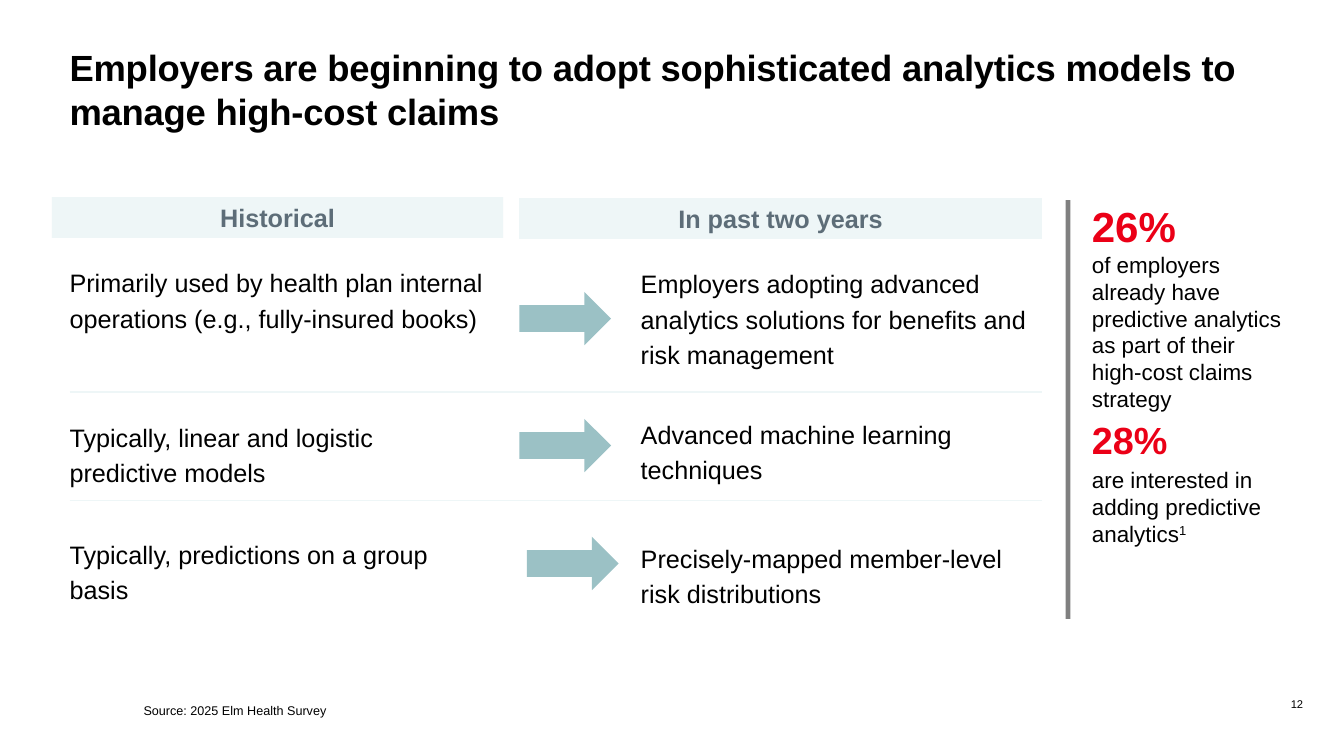
from pptx import Presentation
from pptx.dml.color import RGBColor
from pptx.enum.shapes import MSO_CONNECTOR, MSO_SHAPE
from pptx.enum.text import MSO_ANCHOR, PP_ALIGN
from pptx.oxml.ns import qn
from pptx.util import Pt
from lxml import etree

PX = 9144  # EMU in one px, 100 px to the inch
FONT = "Arial"
BLACK = RGBColor(0x00, 0x00, 0x00)
RED = RGBColor(0xEB, 0x00, 0x17)
SLATE = RGBColor(0x5D, 0x6D, 0x78)
PALE = RGBColor(0xEE, 0xF6, 0xF7)
TEAL = RGBColor(0x9B, 0xC1, 0xC5)
GRAY = RGBColor(0x80, 0x80, 0x80)

# Historical text, its top, recent text, its top, arrow left, arrow top
ROWS = [
    ("Primarily used by health plan internal operations (e.g., fully-insured books)", 521,
     "Employers adopting advanced analytics solutions for benefits and risk management", 523,
     1030, 579),
    ("Typically, linear and logistic predictive models", 827,
     "Advanced machine learning techniques", 821, 1030, 831),
    ("Typically, predictions on a group basis", 1060,
     "Precisely-mapped member-level risk distributions", 1068, 1045, 1065),
]


def emu(*lengths):
    return [length * PX for length in lengths]


def style(paragraph, size, color=BLACK, bold=False):
    font = paragraph.font
    font.name, font.size, font.bold = FONT, Pt(size), bold
    font.color.rgb = color


def add_frame(slide, box, inset=True):
    """Add a wrapping text box and return its text frame."""
    frame = slide.shapes.add_textbox(*emu(*box)).text_frame
    frame.word_wrap = True
    if not inset:
        frame.margin_left = frame.margin_right = frame.margin_top = frame.margin_bottom = 0
    return frame


def add_text(slide, box, text, size, bold=False, inset=False):
    paragraph = add_frame(slide, box, inset).paragraphs[0]
    paragraph.add_run().text = text
    style(paragraph, size, bold=bold)
    return paragraph


def add_block(slide, kind, box, color):
    shape = slide.shapes.add_shape(kind, *emu(*box))
    shape.shadow.inherit = False
    shape.fill.solid()
    shape.fill.fore_color.rgb = color
    shape.line.fill.background()
    return shape


def add_title(slide, box):
    paragraph = add_text(
        slide, box,
        "Employers are beginning to adopt sophisticated analytics models to manage high-cost claims",
        52, bold=True)
    paragraph.runs[0].font._element.set("spc", "-30")


def add_heading(slide, box, text):
    frame = add_block(slide, MSO_SHAPE.RECTANGLE, box, PALE).text_frame
    frame.vertical_anchor = MSO_ANCHOR.MIDDLE
    paragraph = frame.paragraphs[0]
    paragraph.text = text
    paragraph.alignment = PP_ALIGN.CENTER
    style(paragraph, 36, SLATE, True)


def add_cell(slide, box, text):
    paragraph = add_text(slide, box, text, 36)
    paragraph.line_spacing = 1.17
    paragraph.space_after = Pt(10)


def add_divider(slide, left, right, y):
    line = slide.shapes.add_connector(MSO_CONNECTOR.STRAIGHT, *emu(left, y, right, y))
    line.line.color.rgb = PALE
    line.line.width = Pt(2)
    etree.SubElement(line._element.spPr, qn("a:effectLst"))


def add_comparison(slide, left, top, width):
    """Two headed columns, with an arrow from past to present in each row."""
    right = left + width
    add_heading(slide, (left, top, 895, 81), "Historical")
    add_heading(slide, (left + 927, top + 2, width - 927, 81), "In past two years")
    for y in (778, 993):
        add_divider(slide, left + 35, right - 1, y)
    for past, past_top, recent, recent_top, arrow_left, arrow_top in ROWS:
        past_width = 860 if past_top == 521 else 770
        add_cell(slide, (left + 35, past_top, past_width, 115), past)
        add_cell(slide, (left + 1168, recent_top, width - 1168, 83), recent)
        add_block(slide, MSO_SHAPE.RIGHT_ARROW, (arrow_left, arrow_top, 182, 106), TEAL)


def add_sidebar(slide, left, top, width, height):
    add_block(slide, MSO_SHAPE.RECTANGLE, (left, top + 4, 9, height), GRAY)
    frame = add_frame(slide, (left + 42, top, width - 42, 703))
    lines = [
        ("26%", 60, RED, True, 0),
        ("of employers already have predictive analytics as part of their "
         "high-cost claims strategy", 32, BLACK, False, 6),
        ("28%", 54, RED, True, 6),
        ("are interested in adding predictive analytics", 32, BLACK, False, 0),
    ]
    for index, (text, size, color, bold, after) in enumerate(lines):
        paragraph = frame.add_paragraph() if index else frame.paragraphs[0]
        paragraph.add_run().text = text
        paragraph.space_after = Pt(after)
        style(paragraph, size, color, bold)
    note = paragraph.add_run()
    note.text = "1"
    note.font._element.set("baseline", "30000")


def add_footer(slide, left, top, right):
    add_text(slide, (left, top + 33, 757, 40), "Source: 2025 Elm Health Survey", 18, inset=True)
    frame = add_frame(slide, (right - 88, top, 88, 80), inset=False)
    frame.vertical_anchor = MSO_ANCHOR.MIDDLE
    number = frame.paragraphs[0]
    number.text = "12"
    number.alignment = PP_ALIGN.RIGHT
    style(number, 16)


def main():
    presentation = Presentation()
    presentation.slide_width, presentation.slide_height = emu(2666, 1500)
    slide = presentation.slides.add_slide(presentation.slide_layouts[6])
    add_title(slide, (138, 90, 2318, 175))
    add_comparison(slide, 103, 391, 1964)
    add_sidebar(slide, 2114, 393, 450, 831)
    add_footer(slide, 275, 1357, 2585)
    presentation.save("out.pptx")


if __name__ == "__main__":
    main()
